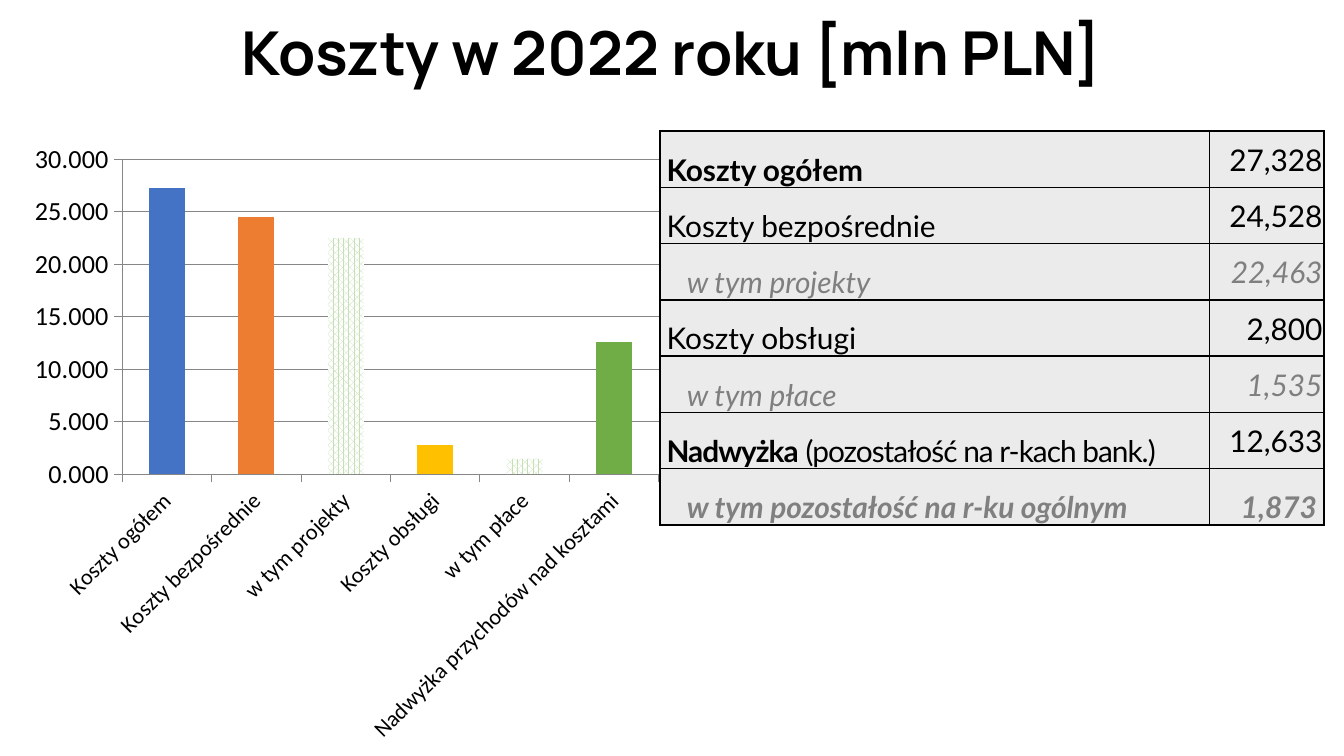
from dataclasses import dataclass

from pptx import Presentation
from pptx.chart.data import CategoryChartData
from pptx.dml.color import RGBColor
from pptx.enum.chart import XL_CHART_TYPE as ChartType, XL_TICK_MARK as TickMark
from pptx.enum.dml import MSO_PATTERN as Pattern
from pptx.enum.text import MSO_ANCHOR as Anchor, MSO_AUTO_SIZE as AutoSize, PP_ALIGN as Align
from pptx.oxml import parse_xml
from pptx.oxml.ns import nsdecls, qn
from pptx.util import Inches, Pt


@dataclass(frozen=True)
class Theme:
    text: str = "000000"
    muted: str = "7F7F7F"
    muted_total: str = "808080"
    cell: str = "D9D9D9"
    grid: str = "868686"
    pattern: str = "C5E0B4"
    paper: str = "FFFFFF"
    title_font: str = "Manrope"
    table_font: str = "Lato"
    chart_font: str = "Calibri"
    title_size: float = 32.4
    table_size: float = 16
    value_size: float = 14
    category_size: float = 12
    chart_size: float = 10
    grid_width: float = 0.5


def rgb(color):
    return RGBColor.from_string(color)


class SlideBuilder:
    """Places elements by percentages of the slide's width and height."""

    def __init__(self, presentation, theme):
        self.theme = theme
        self.width, self.height = presentation.slide_width, presentation.slide_height
        self.slide = presentation.slides.add_slide(presentation.slide_layouts[5])

    def box(self, left, top, width, height):
        return (int(self.width * left / 100), int(self.height * top / 100),
                int(self.width * width / 100), int(self.height * height / 100))

    def style(self, font, name, size, color, bold=False, italic=False):
        font.name, font.size = name, Pt(size)
        font.bold, font.italic = bold, italic
        font.color.rgb = rgb(color)

    def title(self, text, area):
        shape = self.slide.shapes.title
        shape.left, shape.top, shape.width, shape.height = self.box(*area)
        frame = shape.text_frame
        frame.auto_size = AutoSize.NONE
        frame.vertical_anchor = Anchor.MIDDLE
        paragraph = frame.paragraphs[0]
        paragraph.alignment = Align.CENTER
        paragraph.line_spacing = 0.9
        run = paragraph.add_run()
        run.text = text
        self.style(run.font, self.theme.title_font, self.theme.title_size, self.theme.text, True)

    def cell_frame(self, cell):
        """Half-transparent fill and thin borders."""
        cell.fill.solid()
        cell.fill.fore_color.rgb = rgb(self.theme.cell)
        properties = cell._tc.get_or_add_tcPr()
        color = properties.find(".//" + qn("a:srgbClr"))
        color.append(parse_xml(f'<a:alpha {nsdecls("a")} val="50000"/>'))
        for index, side in enumerate("LRTB"):
            properties.insert(index, parse_xml(
                f'<a:ln{side} {nsdecls("a")} w="{Pt(1)}"><a:solidFill>'
                f'<a:srgbClr val="{self.theme.text}"/></a:solidFill></a:ln{side}>'))

    def cell_text(self, cell, runs, color, italic, is_label, roomy):
        """Roomy cells sit on the bottom edge with side margins."""
        cell.vertical_anchor = Anchor.BOTTOM if roomy else Anchor.MIDDLE
        cell.margin_left = cell.margin_right = Inches(0.05 if roomy else 0.01)
        cell.margin_top = Inches(0 if roomy else 0.01)
        cell.margin_bottom = 0
        paragraph = cell.text_frame.paragraphs[0]
        paragraph.alignment = Align.LEFT if is_label else Align.RIGHT
        if roomy:
            paragraph.line_spacing = 1.07
        if is_label and italic:
            paragraph._p.get_or_add_pPr().set("marL", str(Inches(0.15)))
        for text, bold in runs:
            run = paragraph.add_run()
            run.text = text
            self.style(run.font, self.theme.table_font, self.theme.table_size,
                       color, bold, italic)
            if len(runs) > 1:
                run._r.get_or_add_rPr().set("spc", "-50")

    def table(self, rows, area, shares):
        left, top, width, height = self.box(*area)
        table = self.slide.shapes.add_table(len(rows), 2, left, top, width, height).table
        table.first_row = table.horz_banding = False
        for column, share in zip(table.columns, shares):
            column.width = int(width * share / sum(shares))
        for index, (label, value, color, italic) in enumerate(rows):
            table.rows[index].height = height // len(rows)
            is_last = index == len(rows) - 1
            for column, runs in enumerate((label, [(value, is_last)])):
                cell = table.cell(index, column)
                self.cell_frame(cell)
                is_label = column == 0
                self.cell_text(cell, runs, color, italic, is_label, is_label or is_last)

    def grid_line(self, line):
        line.color.rgb = rgb(self.theme.grid)
        line.width = Pt(self.theme.grid_width)

    def axis(self, axis, size):
        axis.major_tick_mark = TickMark.OUTSIDE
        axis.minor_tick_mark = TickMark.NONE
        self.grid_line(axis.format.line)
        self.style(axis.tick_labels.font, self.theme.chart_font, size, self.theme.text)

    def chart(self, bars, area, plot):
        data = CategoryChartData(number_format="General")
        data.categories = [name for name, _, _ in bars]
        data.add_series("Series 1", [value for _, value, _ in bars])
        chart = self.slide.shapes.add_chart(
            ChartType.COLUMN_CLUSTERED, *self.box(*area), data).chart
        chart.has_legend = chart.has_title = False
        self.style(chart.font, self.theme.chart_font, self.theme.chart_size, self.theme.text)

        # Axes
        values, categories = chart.value_axis, chart.category_axis
        self.axis(values, self.theme.value_size)
        self.axis(categories, self.theme.category_size)
        values.minimum_scale, values.maximum_scale, values.major_unit = 0, 30, 5
        values.tick_labels.number_format = "0.000"
        values.tick_labels.number_format_is_linked = False
        values.has_major_gridlines = True
        self.grid_line(values.major_gridlines.format.line)
        categories._element.find(".//" + qn("a:bodyPr")).set("rot", "-2700000")

        # Bars: a colour, or the pattern for the "w tym" parts
        chart.plots[0].gap_width = 150
        chart.plots[0].vary_by_categories = False
        series = chart.plots[0].series[0]
        series.invert_if_negative = False
        for index, (_, _, color) in enumerate(bars):
            fill = series.points[index].format.fill
            if color:
                fill.solid()
                fill.fore_color.rgb = rgb(color)
            else:
                fill.patterned()
                fill.pattern = Pattern.PERCENT_75
                fill.fore_color.rgb = rgb(self.theme.pattern)
                fill.back_color.rgb = rgb(self.theme.paper)

        # Plot area inside the chart, as percentages of its size
        plot_area = chart._chartSpace.chart.plotArea
        for layout in plot_area.findall(qn("c:layout")):
            plot_area.remove(layout)
        places = "".join(f'<c:{key} val="{share / 100:.3f}"/>'
                         for key, share in zip("xywh", plot))
        plot_area.insert(0, parse_xml(
            f'<c:layout {nsdecls("c")}><c:manualLayout><c:layoutTarget val="inner"/>'
            f'<c:xMode val="edge"/><c:yMode val="edge"/>{places}'
            f'</c:manualLayout></c:layout>'))


def main():
    theme = Theme()
    presentation = Presentation()
    presentation.slide_width = Inches(10)
    presentation.slide_height = presentation.slide_width * 9 // 16
    builder = SlideBuilder(presentation, theme)

    builder.title("Koszty w 2022 roku [mln PLN]", (0, 2, 100, 10.7))

    # Label runs (text, bold), value, colour, italic
    rows = [
        ([("Koszty ogółem", True)], "27,328", theme.text, False),
        ([("Koszty bezpośrednie", False)], "24,528", theme.text, False),
        ([("w tym projekty", False)], "22,463", theme.muted, True),
        ([("Koszty obsługi", False)], "2,800", theme.text, False),
        ([("w tym płace", False)], "1,535", theme.muted, True),
        ([("Nadwyżka", True), (" (pozostałość na r-kach bank.)", False)],
         "12,633", theme.text, False),
        ([("w tym pozostałość na r-ku ogólnym", True)], "1,873", theme.muted_total, True),
    ]
    builder.table(rows, (49.1, 17.35, 49.4, 52.1), (4.09, 0.85))

    bars = [
        ("Koszty ogółem", 27.3, "4472C4"),
        ("Koszty bezpośrednie", 24.5, "ED7D31"),
        ("w tym projekty", 22.5, None),
        ("Koszty obsługi", 2.8, "FFC000"),
        ("w tym płace", 1.5, None),
        ("Nadwyżka przychodów nad kosztami", 12.6, "70AD47"),
    ]
    builder.chart(bars, (1.7, 17.2, 48.3, 82.7), (15.3, 4.7, 82.7, 50.4))

    presentation.save("out.pptx")


if __name__ == "__main__":
    main()
